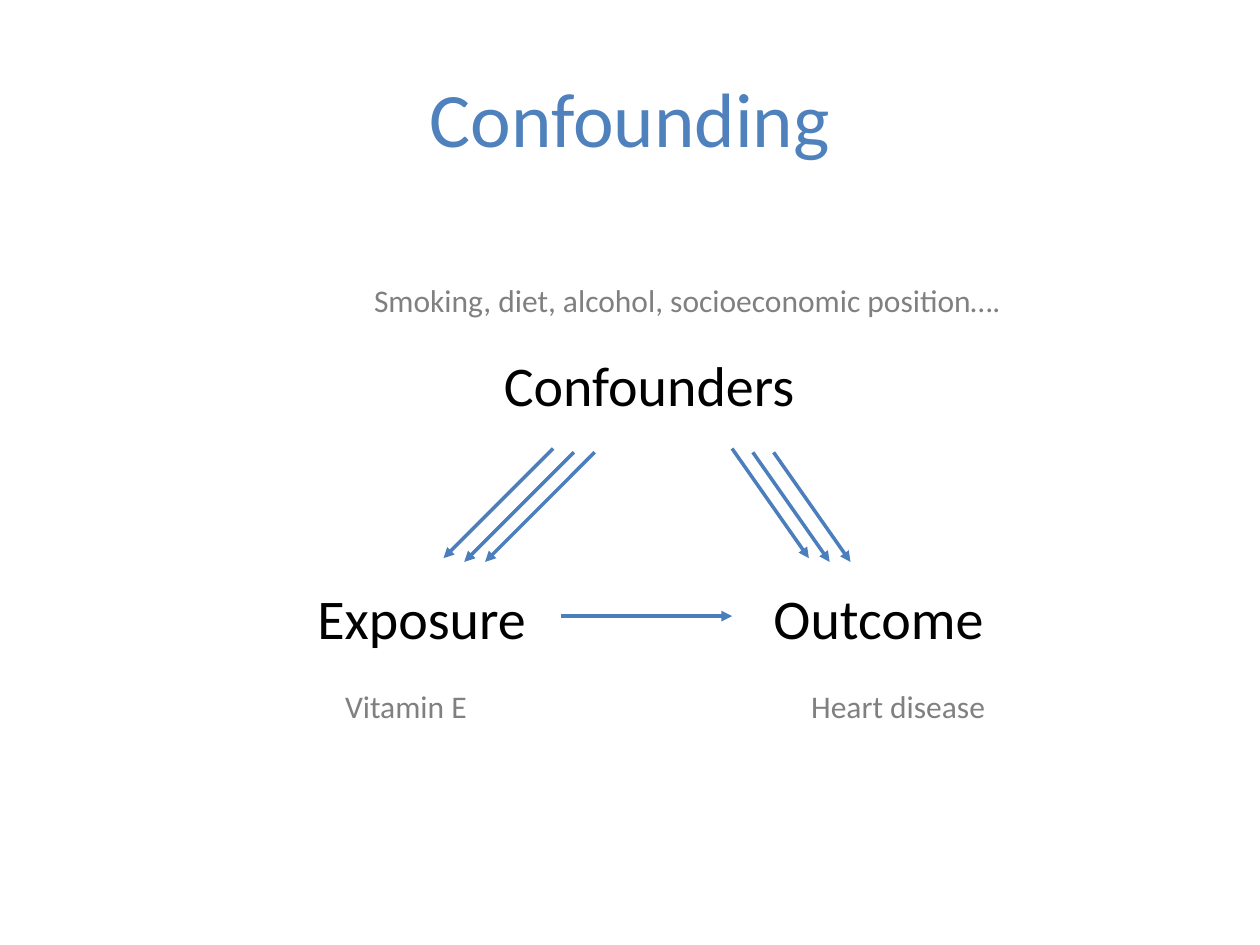
import pptx
import pptx.dml.color
import pptx.enum.shapes
import pptx.enum.text
import pptx.oxml.ns
import pptx.util
from lxml import etree
from pptx.util import Inches

TITLE_BLUE = "4F81BD"
ARROW_BLUE = "4B7EBC"
BLACK = "000000"
GRAY = "808080"


def color(hex_value):
    return pptx.dml.color.RGBColor.from_string(hex_value)


def add_label(slide, box, text, size, hex_value, wrap=True, centered=False):
    label = slide.shapes.add_textbox(*(Inches(length) for length in box))
    frame = label.text_frame
    frame.text = text
    frame.word_wrap = wrap
    paragraph = frame.paragraphs[0]
    if centered:
        frame.vertical_anchor = pptx.enum.text.MSO_ANCHOR.MIDDLE
        paragraph.alignment = pptx.enum.text.PP_ALIGN.CENTER
    else:
        frame.auto_size = pptx.enum.text.MSO_AUTO_SIZE.SHAPE_TO_FIT_TEXT
    font = paragraph.runs[0].font
    font.name = "Calibri"
    font.size = pptx.util.Pt(size)
    font.color.rgb = color(hex_value)


def add_arrow(slide, x, y, dx, dy):
    arrow = slide.shapes.add_connector(
        pptx.enum.shapes.MSO_CONNECTOR.STRAIGHT,
        Inches(x), Inches(y), Inches(x + dx), Inches(y + dy))
    arrow.line.color.rgb = color(ARROW_BLUE)
    arrow.line.width = pptx.util.Pt(2)
    qn = pptx.oxml.ns.qn
    etree.SubElement(arrow.line._get_or_add_ln(), qn("a:tailEnd"), type="triangle")
    etree.SubElement(arrow._element.spPr, qn("a:effectLst"))


def add_arrow_bundle(slide, x, y, dx, dy):
    # Three parallel arrows; the first sits slightly higher
    for index, drop in enumerate((0, 0.03, 0.03)):
        add_arrow(slide, x + index * 0.165, y + drop, dx, dy)


def add_diagram(slide, left, top):
    # Variables and their examples, placed from the diagram's corner
    for x, y, width, height, text, size, hex_value, wrap in (
        (0.45, 0, 5.28, 0.4, "Smoking, diet, alcohol, socioeconomic position….", 18, GRAY, True),
        (1.48, 0.55, 2.74, 0.64, "Confounders", 32, BLACK, True),
        (0, 2.4, 1.95, 0.64, "Exposure", 32, BLACK, True),
        (3.62, 2.4, 2.11, 0.64, "Outcome", 32, BLACK, True),
        (0.22, 3.22, 1.18, 0.4, "Vitamin E", 18, GRAY, False),
        (3.92, 3.22, 1.6, 0.4, "Heart disease", 18, GRAY, False),
    ):
        add_label(slide, (left + x, top + y, width, height), text, size, hex_value, wrap)

    # Exposure to outcome, then confounders to each of them
    add_arrow(slide, left + 2.03, top + 2.71, 1.36, 0)
    add_arrow_bundle(slide, left + 1.97, top + 1.38, -0.87, 0.87)
    add_arrow_bundle(slide, left + 3.39, top + 1.38, 0.61, 0.87)


def main():
    deck = pptx.Presentation()
    deck.slide_width = Inches(10)
    deck.slide_height = Inches(7.5)
    slide = deck.slides.add_slide(deck.slide_layouts[6])
    add_label(slide, (0.5, 0.3, 9, 1.25), "Confounding", 44, TITLE_BLUE, centered=True)
    add_diagram(slide, 2.42, 2.18)
    deck.save("out.pptx")


if __name__ == "__main__":
    main()
